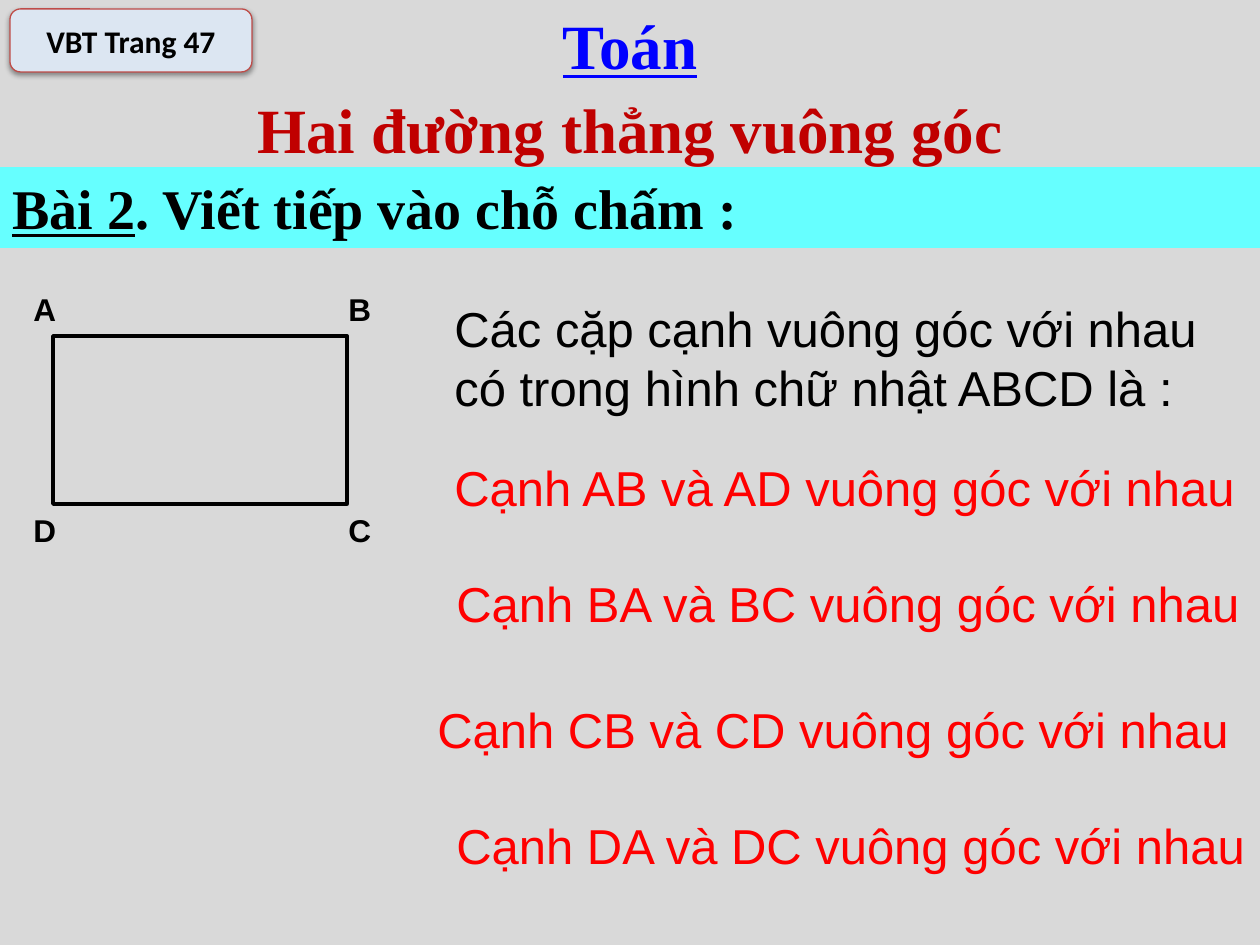
from lxml import etree
from pptx import Presentation
from pptx.dml.color import RGBColor
from pptx.enum.shapes import MSO_SHAPE
from pptx.enum.text import MSO_ANCHOR, MSO_AUTO_SIZE, PP_ALIGN
from pptx.util import Pt

RECT, ROUND = MSO_SHAPE.RECTANGLE, MSO_SHAPE.ROUNDED_RECTANGLE
TOP, MIDDLE = MSO_ANCHOR.TOP, MSO_ANCHOR.MIDDLE
LEFT, CENTER, JUSTIFY = PP_ALIGN.LEFT, PP_ALIGN.CENTER, PP_ALIGN.JUSTIFY
NONE = MSO_AUTO_SIZE.NONE
PX = 914400 / 126
DRAW = "http://schemas.openxmlformats.org/drawingml/2006/main"

THEME = {
    "back": RGBColor(0xD9, 0xD9, 0xD9),
    "band": RGBColor(0x66, 0xFF, 0xFF),
    "badge": RGBColor(0xDC, 0xE6, 0xF2),
    "edge": RGBColor(0xBF, 0x4C, 0x48),
    "ink": RGBColor(0, 0, 0),
    "blue": RGBColor(0, 0, 0xFF),
    "lesson": RGBColor(0xC0, 0, 0),
    "answer": RGBColor(0xFF, 0, 0),
    "head": {"name": "Times New Roman", "size": Pt(36), "bold": True},
    "task": {"name": "Times New Roman", "size": Pt(32), "bold": True},
    "page": {"name": "Calibri", "size": Pt(18), "bold": True},
    "corner": {"name": "Arial", "size": Pt(18), "bold": True},
    "body": {"name": "Arial", "size": Pt(28), "bold": False},
}


def scale(*box):
    return [round(n * PX) for n in box]


def write(shape, runs, style, color, align=LEFT, anchor=TOP):
    """Fill a shape with one paragraph; runs are (text, underline) pairs."""
    frame = shape.text_frame
    form = {"word_wrap": True, "auto_size": NONE, "vertical_anchor": anchor}
    for key, value in form.items():
        setattr(frame, key, value)
    para = frame.paragraphs[0]
    para.alignment = align
    for text, under in runs:
        run = para.add_run()
        run.text = text
        for key, value in {**THEME[style], "underline": under}.items():
            setattr(run.font, key, value)
        run.font.color.rgb = THEME[color]


deck = Presentation()
deck.slide_width, deck.slide_height = scale(1260, 945)
slide = deck.slides.add_slide(deck.slide_layouts[5])
slide.background.fill.solid()
slide.background.fill.fore_color.rgb = THEME["back"]
shapes = slide.shapes

# Headings
title = shapes.title
spots = zip(("left", "top", "width", "height"), scale(0, 0, 1260, 89))
for key, value in spots:
    setattr(title, key, value)
write(title, [("Toán", True)], "head", "blue", CENTER)

# Task band, page badge and rectangle ABCD
panels = {}
for name, kind, box, fill, edge, width in (
    ("band", RECT, (0, 167, 1260, 81), "band", None, 0),
    ("badge", ROUND, (10, 9, 242, 63), "badge", "edge", 0.75),
    ("figure", RECT, (53, 336, 294, 168), None, "ink", 2),
):
    panel = shapes.add_shape(kind, *scale(*box))
    panel.shadow.inherit = False
    if fill:
        panel.fill.solid()
        panel.fill.fore_color.rgb = THEME[fill]
    else:
        panel.fill.background()
    if edge:
        panel.line.color.rgb = THEME[edge]
        panel.line.width = Pt(width)
    else:
        panel.line.fill.background()
    panels[name] = panel

task = [("Bài 2", True), (". Viết tiếp vào chỗ chấm :", False)]
write(panels["band"], task, "task", "ink", JUSTIFY)
write(panels["badge"], [("VBT Trang 47", False)], "page", "ink", CENTER, MIDDLE)

effects = panels["badge"].element.spPr.find(f"{{{DRAW}}}effectLst")
effects.append(etree.fromstring(
    f'<a:outerShdw xmlns:a="{DRAW}" blurRad="{Pt(3.1)}" dist="{Pt(1.6)}" '
    'dir="5400000" rotWithShape="0"><a:srgbClr val="000000">'
    '<a:alpha val="38000"/></a:srgbClr></a:outerShdw>'))

# Lesson name, corner letters, question and answers
notes = [("Hai đường thẳng vuông góc", (0, 84, 1260, 89), "head", "lesson", CENTER)]
for i, letter in enumerate("ABDC"):
    box = (21 + i % 2 * 315, 284 + i // 2 * 221, 44, 50)
    notes.append((letter, box, "corner", "ink", CENTER))
notes.append(("Các cặp cạnh vuông góc với nhau có trong hình chữ nhật ABCD là :",
              (442, 292, 803, 131), "body", "ink", LEFT))
for pair, x, y in (("AB và AD", 442, 451), ("BA và BC", 444, 567),
                   ("CB và CD", 425, 693), ("DA và DC", 444, 809)):
    notes.append((f"Cạnh {pair} vuông góc với nhau",
                  (x, y, 1260 - x, 72), "body", "answer", LEFT))

for text, box, style, color, align in notes:
    note = shapes.add_textbox(*scale(*box))
    write(note, [(text, False)], style, color, align)

deck.save("out.pptx")
